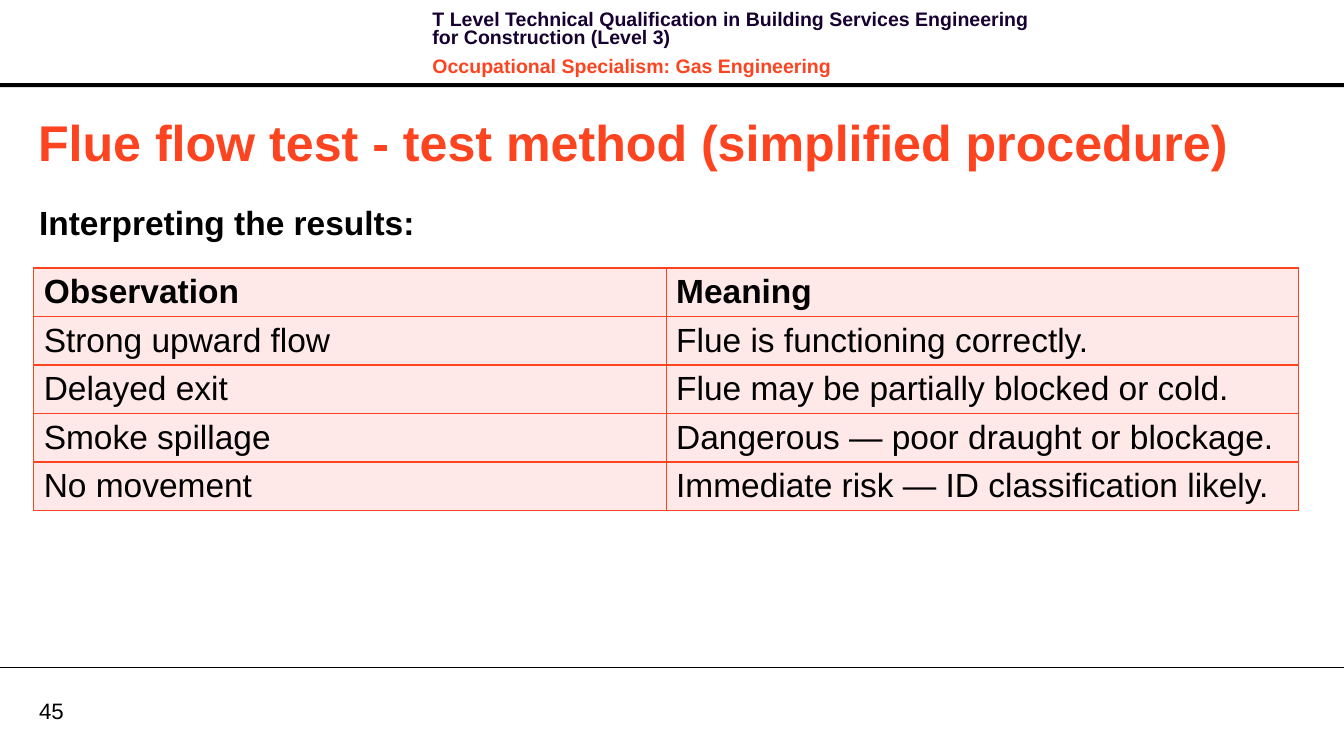
from lxml import etree
from pptx import Presentation
from pptx.dml.color import RGBColor
from pptx.enum import shapes, text
from pptx.oxml import parse_xml
from pptx.oxml.ns import nsdecls, qn
from pptx.util import Pt

BLACK = RGBColor(0x00, 0x00, 0x00)
NAVY = RGBColor(0x17, 0x01, 0x30)
ORANGE = RGBColor(0xFC, 0x44, 0x21)
PINK = RGBColor(0xFE, 0xE9, 0xE8)
WIDTH, HEIGHT = 964, 538.5


def style_paragraph(paragraph, wording, size, colour, bold, spacing={}):
    run = paragraph.add_run()
    run.text = wording
    for key, value in dict(name="Arial", size=Pt(size), bold=bold).items():
        setattr(run.font, key, value)
    run.font.color.rgb = colour
    for key, value in spacing.items():
        setattr(paragraph, key, value)


def add_text(box, inset, anchor, paragraphs):
    frame = slide.shapes.add_textbox(*map(Pt, box)).text_frame
    layout = dict(zip(("margin_left", "margin_top", "margin_right", "margin_bottom"), map(Pt, inset)))
    layout.update(word_wrap=True, vertical_anchor=anchor)
    for key, value in layout.items():
        setattr(frame, key, value)
    for index, details in enumerate(paragraphs):
        paragraph = frame.add_paragraph() if index else frame.paragraphs[0]
        style_paragraph(paragraph, *details)


deck = Presentation()
deck.slide_width, deck.slide_height = Pt(WIDTH), Pt(HEIGHT)
slide = deck.slides.add_slide(deck.slide_layouts[6])
TOP, MIDDLE = text.MSO_ANCHOR.TOP, text.MSO_ANCHOR.MIDDLE
NO_INSET, INSET = (0, 0, 0, 0), (7.2, 3.6, 7.2, 3.6)

header_rule = slide.shapes.add_shape(shapes.MSO_SHAPE.RECTANGLE, 0, Pt(59.6), Pt(WIDTH), Pt(2.9))
header_rule.shadow.inherit = False
header_rule.fill.solid()
header_rule.fill.fore_color.rgb = BLACK
header_rule.line.fill.background()

footer_rule = slide.shapes.add_connector(
    shapes.MSO_CONNECTOR.STRAIGHT, 0, Pt(478.8), Pt(WIDTH), Pt(478.8))
footer_rule.line.color.rgb = BLACK
footer_rule.line.width = Pt(0.75)
etree.SubElement(footer_rule._element.spPr, qn("a:effectLst"))

header_spacing = dict(line_spacing=Pt(13.1), space_after=Pt(4))
add_text((28.1, 499.7, 46.1, 19.4), NO_INSET, MIDDLE, [("45", 16, BLACK, False)])
add_text((303.1, 5, 458.6, 46.1), INSET, TOP, [
    ("T Level Technical Qualification in Building Services Engineering for Construction (Level 3)",
     14, NAVY, True, header_spacing),
    ("Occupational Specialism: Gas Engineering",
     14, ORANGE, True, dict(header_spacing, space_before=Pt(4))),
])
add_text((20.2, 75.6, 915.8, 51.1), INSET, MIDDLE,
         [("Flue flow test - test method (simplified procedure)", 36, ORANGE, True)])
add_text((28.1, 141.8, 737.3, 326.2), NO_INSET, TOP,
         [("Interpreting the results:", 24, BLACK, True, dict(line_spacing=1.1, space_after=Pt(12)))])

findings = [
    ("Observation", "Meaning"),
    ("Strong upward flow", "Flue is functioning correctly."),
    ("Delayed exit", "Flue may be partially blocked or cold."),
    ("Smoke spillage", "Dangerous — poor draught or blockage."),
    ("No movement", "Immediate risk — ID classification likely."),
]
ROW_HEIGHT = 34
results = slide.shapes.add_table(
    len(findings), 2, Pt(24.2), Pt(192.2), Pt(907.2), Pt(ROW_HEIGHT * len(findings))).table
cell_layout = dict(vertical_anchor=MIDDLE, margin_left=Pt(7.2), margin_right=Pt(7.2),
                   margin_top=Pt(3), margin_bottom=Pt(3))
for row, finding in enumerate(findings):
    for column, wording in enumerate(finding):
        cell = results.cell(row, column)
        for key, value in cell_layout.items():
            setattr(cell, key, value)
        style_paragraph(cell.text_frame.paragraphs[0], wording, 24, BLACK, row == 0)
        for index, side in enumerate(("lnL", "lnR", "lnT", "lnB")):
            border = parse_xml(
                f'<a:{side} {nsdecls("a")} w="{Pt(1)}"><a:solidFill>'
                f'<a:srgbClr val="{ORANGE}"/></a:solidFill></a:{side}>')
            cell._tc.get_or_add_tcPr().insert(index, border)
        cell.fill.solid()
        cell.fill.fore_color.rgb = PINK

deck.save("out.pptx")
